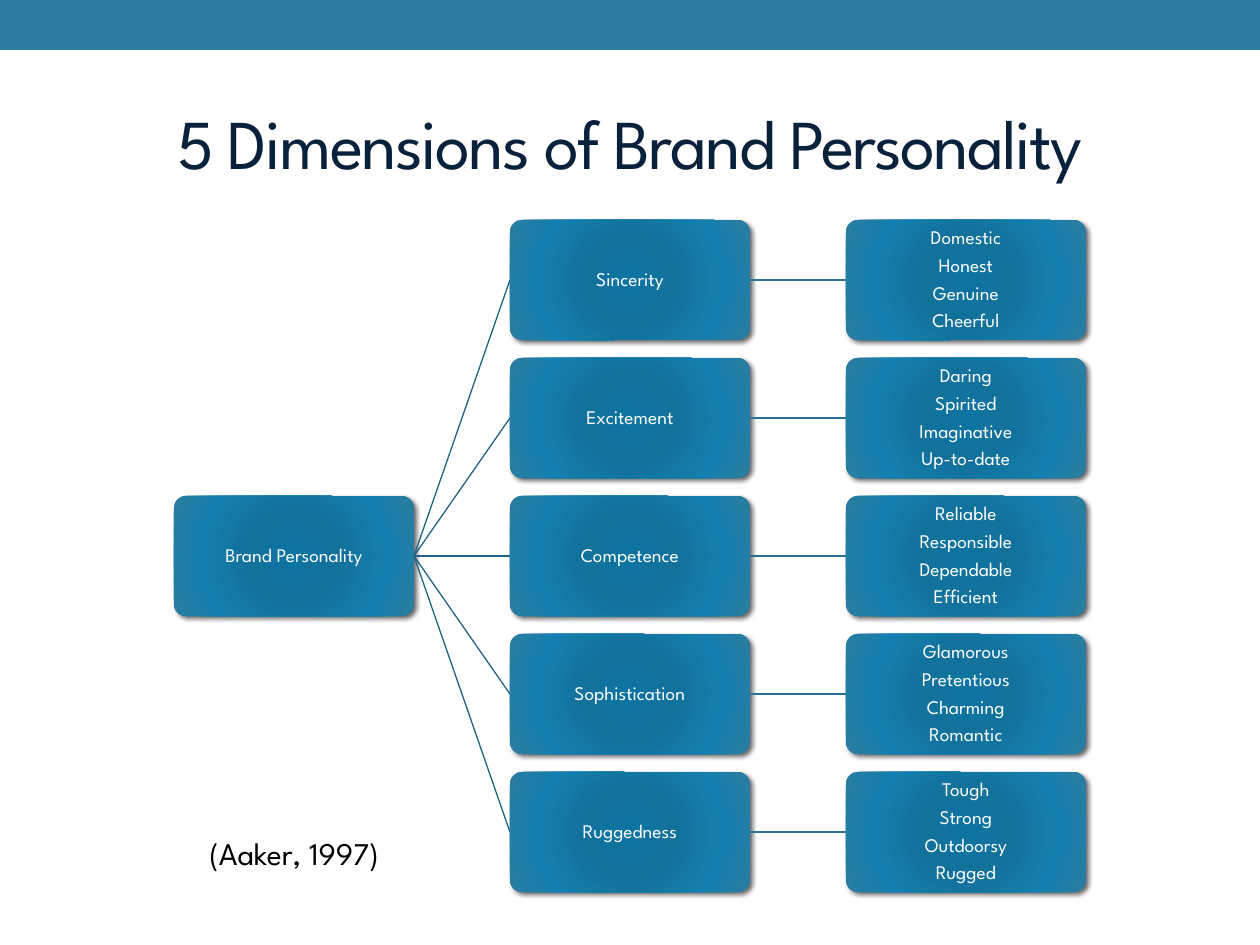
import pptx
import pptx.dml.color
import pptx.enum.shapes
import pptx.enum.text
import pptx.oxml
import pptx.oxml.ns
import pptx.util

EMU_PER_PX = 914400 / 126
FONT = "League Spartan"
CENTER = pptx.enum.text.PP_ALIGN.CENTER
LEFT = pptx.enum.text.PP_ALIGN.LEFT
MIDDLE = pptx.enum.text.MSO_ANCHOR.MIDDLE
TOP = pptx.enum.text.MSO_ANCHOR.TOP
SHAPES = pptx.enum.shapes.MSO_SHAPE

CARD_WIDTH, CARD_HEIGHT = 240, 120
COLUMN_STEP, ROW_STEP = 336, 138
GRADIENT = [(0, "0D74A1"), (34, "12729C"), (70, "147FAE"), (100, "2C7C9F")]
ROOT = "Brand Personality"
DIMENSIONS = {
    "Sincerity": ["Domestic", "Honest", "Genuine", "Cheerful"],
    "Excitement": ["Daring", "Spirited", "Imaginative", "Up-to-date"],
    "Competence": ["Reliable", "Responsible", "Dependable", "Efficient"],
    "Sophistication": ["Glamorous", "Pretentious", "Charming", "Romantic"],
    "Ruggedness": ["Tough", "Strong", "Outdoorsy", "Rugged"],
}


def px(*lengths):
    """Turn px lengths into a list of EMU."""
    return [pptx.util.Emu(round(length * EMU_PER_PX)) for length in lengths]


def color(value):
    """Turn a hex string into a colour."""
    return pptx.dml.color.RGBColor.from_string(value)


def apply_formats(target, formats):
    """Set each attribute of the target from a dict."""
    for name, value in formats.items():
        setattr(target, name, value)


def xml(tag, body):
    """Parse a DrawingML element from its tag name and inner XML."""
    namespace = pptx.oxml.ns.nsdecls("a")
    return pptx.oxml.parse_xml(f"<a:{tag} {namespace}>{body}</a:{tag}>")


def write_lines(shape, lines, size, hex_color, frame_formats, paragraph_formats):
    """Write one paragraph per line and return the paragraphs."""
    frame = shape.text_frame
    apply_formats(frame, frame_formats)
    frame.text = "\n".join(lines)
    for paragraph in frame.paragraphs:
        apply_formats(paragraph, paragraph_formats)
        font = paragraph.runs[0].font
        apply_formats(font, {"name": FONT, "size": pptx.util.Pt(size)})
        font.color.rgb = color(hex_color)
    return frame.paragraphs


def add_bar(slide, box):
    """Draw the plain band along the top."""
    shape = slide.shapes.add_shape(SHAPES.RECTANGLE, *px(*box))
    shape.shadow.inherit = False
    shape.fill.solid()
    shape.fill.fore_color.rgb = color("2C7C9F")
    shape.line.fill.background()


def add_title(slide, box, text):
    """Write the centred slide title with tight letter spacing."""
    shape = slide.shapes.add_textbox(*px(*box))
    frame_formats = {"word_wrap": True, "vertical_anchor": MIDDLE}
    paragraphs = write_lines(shape, [text], 40, "09213B", frame_formats, {"alignment": CENTER})
    paragraphs[0].runs[0].font._element.set("spc", "-100")


def add_citation(slide, box, text):
    """Write the source citation on one line."""
    shape = slide.shapes.add_textbox(*px(*box))
    frame_formats = {"word_wrap": False, "vertical_anchor": TOP}
    write_lines(shape, [text], 18, "000000", frame_formats, {"alignment": LEFT})


def add_card(slide, left, top, lines):
    """Draw a rounded gradient card with a soft shadow and centred lines."""
    shape = slide.shapes.add_shape(
        SHAPES.ROUNDED_RECTANGLE, *px(left, top, CARD_WIDTH, CARD_HEIGHT)
    )
    shape.adjustments[0] = 0.1
    shape.line.fill.background()
    shape.shadow.inherit = False
    properties = shape._element.spPr
    stops = "".join(
        f'<a:gs pos="{position * 1000}"><a:srgbClr val="{value}"/></a:gs>'
        for position, value in GRADIENT
    )
    center = '<a:fillToRect l="100000" t="100000" r="100000" b="100000"/>'
    gradient = xml("gradFill", f'<a:gsLst>{stops}</a:gsLst><a:path path="circle">{center}</a:path>')
    properties.find(pptx.oxml.ns.qn("a:prstGeom")).addnext(gradient)
    shadow = xml("outerShdw", '<a:srgbClr val="000000"><a:alpha val="60000"/></a:srgbClr>')
    distances = {"blurRad": pptx.util.Pt(3), "dist": pptx.util.Pt(2), "dir": 45 * 60000}
    for name, value in distances.items():
        shadow.set(name, str(int(value)))
    properties.find(pptx.oxml.ns.qn("a:effectLst")).append(shadow)

    frame_formats = {"word_wrap": True, "vertical_anchor": MIDDLE}
    for side in ("left", "top", "right", "bottom"):
        frame_formats[f"margin_{side}"] = px(1)[0]
    paragraph_formats = {"alignment": CENTER, "line_spacing": 0.9}
    for paragraph in write_lines(shape, lines, 11, "FFFFFF", frame_formats, paragraph_formats):
        spacing = xml("spcAft", '<a:spcPct val="35000"/>')
        paragraph._element.get_or_add_pPr().append(spacing)


def add_link(slide, start, end, hex_color):
    """Draw a thin straight line between two points."""
    connector = slide.shapes.add_connector(
        pptx.enum.shapes.MSO_CONNECTOR.STRAIGHT, *px(*start, *end)
    )
    connector.line.width = pptx.util.Pt(0.75)
    connector.line.color.rgb = color(hex_color)
    connector._element.spPr.append(xml("effectLst", ""))


def add_tree(slide, left, top):
    """Draw the root, its dimensions and their traits from left to right."""
    columns = [left + COLUMN_STEP * index for index in range(3)]
    middle = CARD_HEIGHT // 2
    root_top = top + ROW_STEP * (len(DIMENSIONS) // 2)
    add_card(slide, columns[0], root_top, [ROOT])
    root_end = (columns[0] + CARD_WIDTH, root_top + middle)
    for row, (dimension, traits) in enumerate(DIMENSIONS.items()):
        row_top = top + ROW_STEP * row
        center = row_top + middle
        add_link(slide, root_end, (columns[1], center), "23637F")
        add_card(slide, columns[1], row_top, [dimension])
        add_link(slide, (columns[1] + CARD_WIDTH, center), (columns[2], center), "287190")
        add_card(slide, columns[2], row_top, traits)


def main():
    """Build the slide and save it."""
    presentation = pptx.Presentation()
    presentation.slide_width, presentation.slide_height = px(1260, 945)
    slide = presentation.slides.add_slide(presentation.slide_layouts[6])
    add_bar(slide, (0, 0, 1260, 50))
    add_title(slide, (63, 73, 1134, 136), "5 Dimensions of Brand Personality")
    add_tree(slide, 174, 220)
    add_citation(slide, (197, 828, 226, 50), "(Aaker, 1997)")
    presentation.save("out.pptx")


if __name__ == "__main__":
    main()
